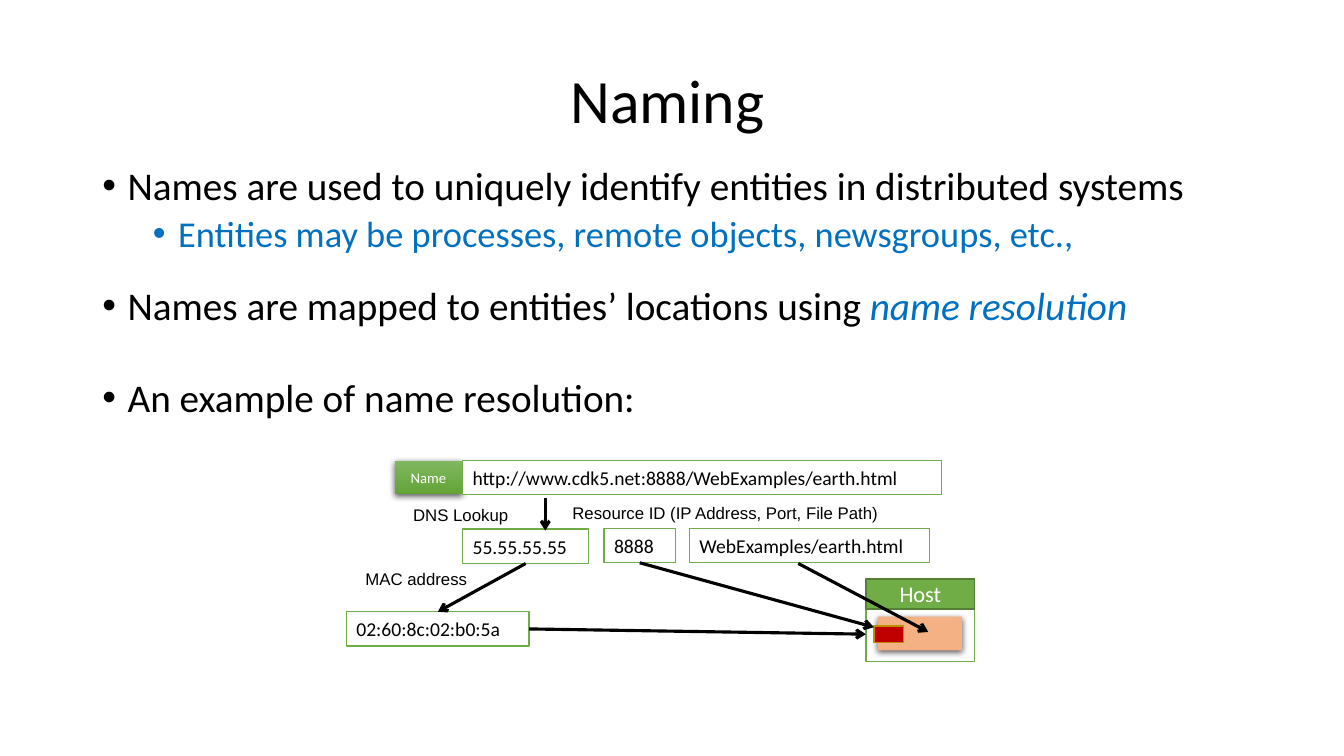
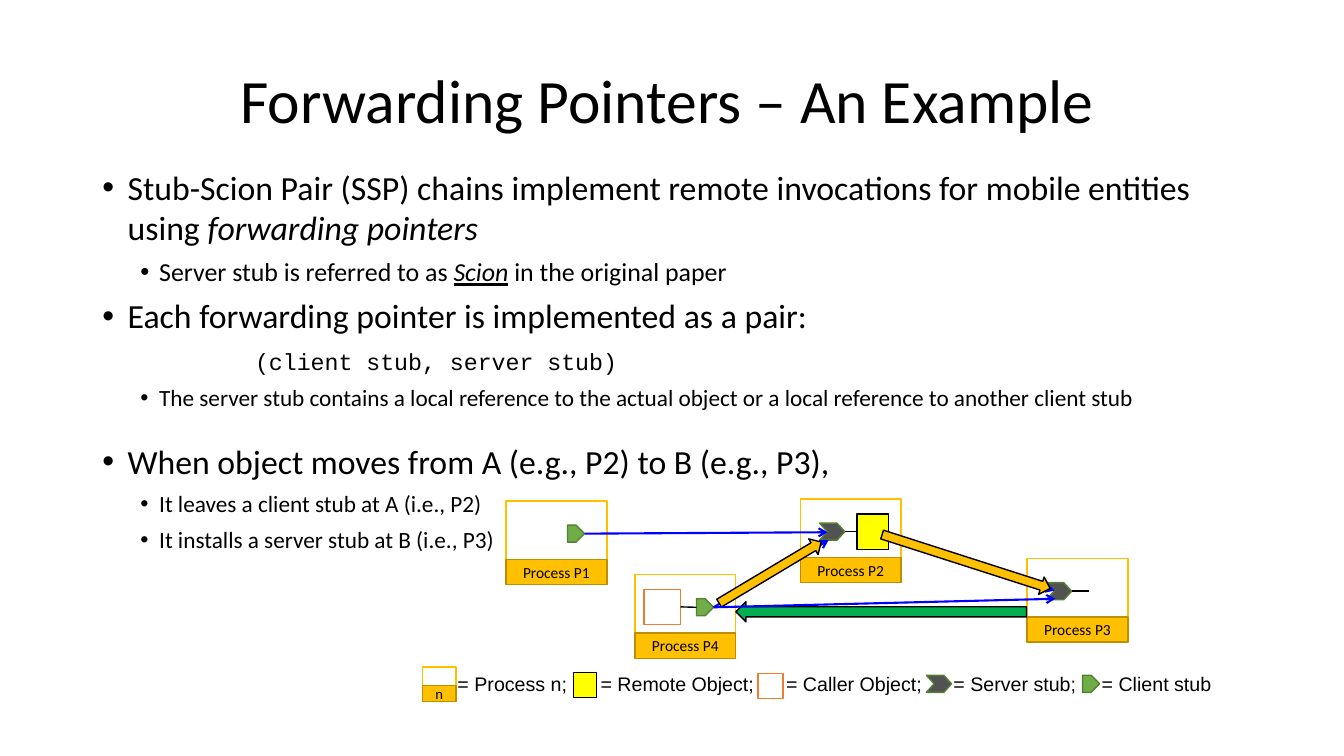
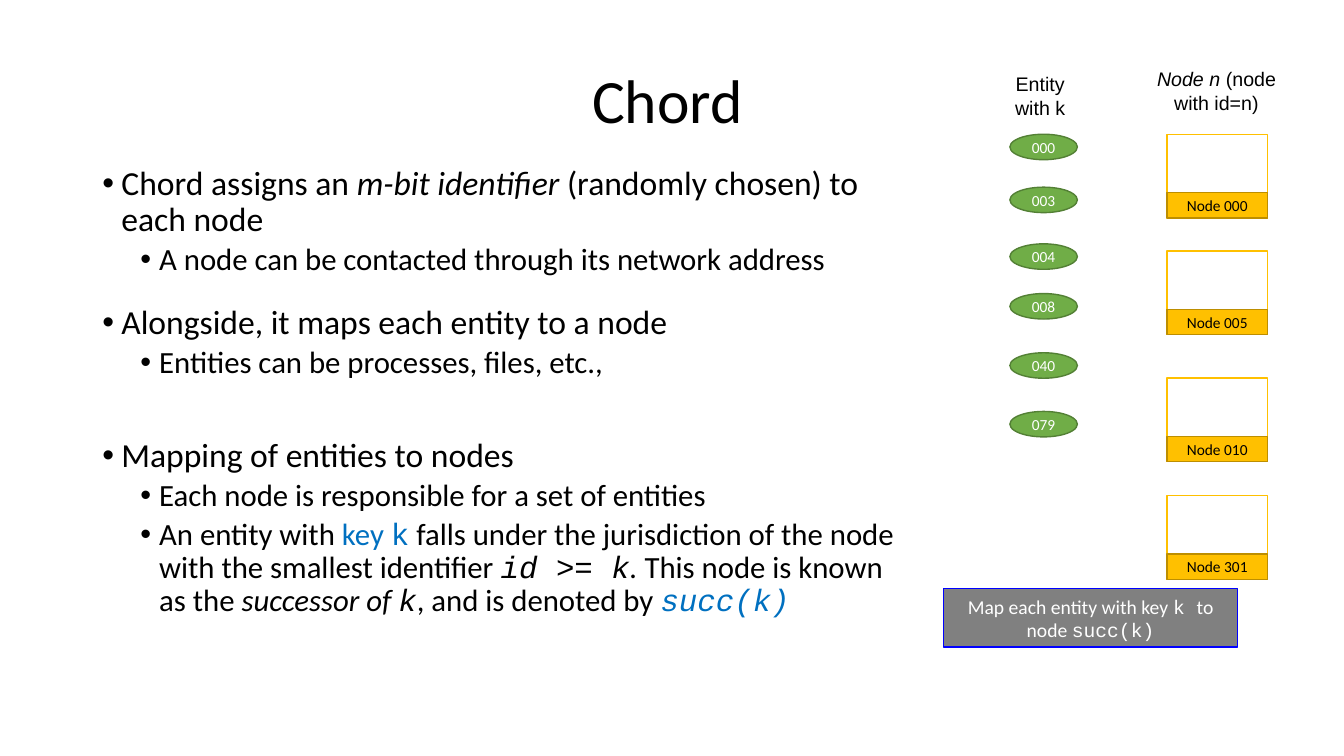
from dataclasses import dataclass

from lxml import etree
from pptx import Presentation
from pptx.dml.color import RGBColor
from pptx.enum.shapes import MSO_CONNECTOR, MSO_SHAPE
from pptx.enum.text import MSO_ANCHOR, MSO_AUTO_SIZE, PP_ALIGN
from pptx.oxml.ns import qn
from pptx.util import Pt

RECTANGLE = MSO_SHAPE.RECTANGLE
ELLIPSE = MSO_SHAPE.OVAL
PENTAGON = MSO_SHAPE.PENTAGON
CHEVRON = MSO_SHAPE.CHEVRON
RIGHT_ARROW = MSO_SHAPE.RIGHT_ARROW
STRAIGHT = MSO_CONNECTOR.STRAIGHT
MIDDLE = MSO_ANCHOR.MIDDLE
TOP = MSO_ANCHOR.TOP
NO_AUTOFIT = MSO_AUTO_SIZE.NONE
LEFT = PP_ALIGN.LEFT
CENTER = PP_ALIGN.CENTER

SANS, LABEL_FONT, MONO = "Calibri", "Arial", "Courier New"
BLACK, WHITE = "000000", "FFFFFF"
GREEN, DARK_GREEN = "70AD47", "538035"
GOLD, DARK_GOLD = "FFC000", "BD8E00"
TEXT_BLUE, LINE_BLUE = "0070C0", "0000FF"
YELLOW, ORANGE, SLATE = "FFFF00", "ED7D31", "525252"

TITLE_BOX = (138, 21.6, 677.5, 104.4)
BODY_LEFT, BODY_TOP = 66, 115.2
BAND_HEIGHT = 18
FRAME_SIZE = (72, 59.8)
CLIENT_SIZE = (12.2, 12.2)
SERVER_SIZE = (18, 12.2)
STUB_TOP = 17.3

ITALIC = {"italic": True}
BLUE = {"color": TEXT_BLUE}
CODE = {"font": MONO}
ITALIC_CODE = {**ITALIC, **CODE}


@dataclass
class Level:
    """Look of one kind of list paragraph."""
    depth: int
    margin: float
    hanging: float
    size: float
    before: float
    color: str = BLACK
    font: str = SANS
    bullet: bool = True


def rgb(color):
    return RGBColor.from_string(color)


def points(values):
    return [Pt(value) for value in values]


def write_runs(paragraph, content, size, color=BLACK, font=SANS):
    """Content is a string or a list of strings and (string, style) pairs."""
    for part in [content] if isinstance(content, str) else content:
        text, style = (part, {}) if isinstance(part, str) else part
        run = paragraph.add_run()
        run.text = text
        run.font.size = Pt(size)
        run.font.name = style.get("font", font)
        run.font.color.rgb = rgb(style.get("color", color))
        run.font.italic = style.get("italic", False)
        run.font.underline = style.get("underline", False)


def place(shape, box):
    shape.left, shape.top, shape.width, shape.height = points(box)


def add_slide(presentation, title):
    slide = presentation.slides.add_slide(presentation.slide_layouts[1])
    shape = slide.shapes.title
    place(shape, TITLE_BOX)
    text_frame = shape.text_frame
    text_frame.auto_size = NO_AUTOFIT
    text_frame.vertical_anchor = MIDDLE
    paragraph = text_frame.paragraphs[0]
    paragraph.alignment = CENTER
    paragraph.line_spacing = 0.9
    write_runs(paragraph, title, 44)
    return slide


def set_bullet(paragraph, level):
    properties = paragraph._p.get_or_add_pPr()
    properties.set("marL", str(Pt(level.margin)))
    properties.set("indent", str(Pt(-level.hanging)))
    if level.bullet:
        etree.SubElement(properties, qn("a:buFont"), typeface="Arial")
        etree.SubElement(properties, qn("a:buChar"), char="•")
    else:
        etree.SubElement(properties, qn("a:buNone"))


def fill_body(slide, width, height, items, line_spacing=0.9):
    """Each item is (level, content) or (level, content, wider space before)."""
    shape = slide.placeholders[1]
    place(shape, (BODY_LEFT, BODY_TOP, width, height))
    text_frame = shape.text_frame
    text_frame.auto_size = NO_AUTOFIT
    text_frame.vertical_anchor = TOP
    for index, (level, content, *wider) in enumerate(items):
        paragraph = text_frame.add_paragraph() if index else text_frame.paragraphs[0]
        paragraph.level = level.depth
        set_bullet(paragraph, level)
        paragraph.alignment = LEFT
        paragraph.line_spacing = line_spacing
        before = wider[0] if wider else level.before
        paragraph.space_before = Pt(before if index else 0)
        paragraph.space_after = Pt(0)
        write_runs(paragraph, content, level.size, level.color, level.font)


def add_box(slide, kind, box, fill, line=None, text="", size=11, color=BLACK,
            alignment=CENTER):
    shape = slide.shapes.add_shape(kind, *points(box))
    shape.shadow.inherit = False
    shape.fill.solid()
    shape.fill.fore_color.rgb = rgb(fill)
    if line:
        shape.line.color.rgb = rgb(line)
        shape.line.width = Pt(1)
    else:
        shape.line.fill.background()
    if text:
        text_frame = shape.text_frame
        text_frame.word_wrap = True
        text_frame.vertical_anchor = MIDDLE
        paragraph = text_frame.paragraphs[0]
        paragraph.alignment = alignment
        write_runs(paragraph, text, size, color)
    return shape


def add_label(slide, box, content, size, alignment=LEFT):
    text_frame = slide.shapes.add_textbox(*points(box)).text_frame
    text_frame.word_wrap = True
    paragraph = text_frame.paragraphs[0]
    paragraph.alignment = alignment
    write_runs(paragraph, content, size, font=LABEL_FONT)


def add_line(slide, start, end, color=BLACK, width=1, arrow=False):
    """Each end is a point (x, y) or a joint (shape, side)."""
    connector = slide.shapes.add_connector(STRAIGHT, 0, 0, 0, 0)
    if isinstance(start[0], (int, float)):
        connector.begin_x, connector.begin_y = points(start)
    else:
        connector.begin_connect(*start)
    if isinstance(end[0], (int, float)):
        connector.end_x, connector.end_y = points(end)
    else:
        connector.end_connect(*end)
    connector.line.color.rgb = rgb(color)
    connector.line.width = Pt(width)
    if arrow:
        etree.SubElement(connector.line._get_or_add_ln(), qn("a:tailEnd"), type="arrow")
    etree.SubElement(connector._element.spPr, qn("a:effectLst"))


def add_shadow(shape):
    effects = shape._element.spPr.find(qn("a:effectLst"))
    shadow = etree.SubElement(effects, qn("a:outerShdw"), blurRad=str(Pt(4.5)),
                              dist=str(Pt(1.5)), dir="5400000", rotWithShape="0")
    shade = etree.SubElement(shadow, qn("a:srgbClr"), val=BLACK)
    etree.SubElement(shade, qn("a:alpha"), val="63000")


def add_frame(slide, left, top, label, size=FRAME_SIZE, band=BAND_HEIGHT, text_size=11):
    """White frame with a gold name band along its bottom."""
    width, height = size
    add_box(slide, RECTANGLE, (left, top, width, height), WHITE, GOLD)
    add_box(slide, RECTANGLE, (left, top + height - band, width, band), GOLD, DARK_GOLD,
            label, text_size)


def add_client_stub(slide, left, top):
    return add_box(slide, PENTAGON, (left, top, *CLIENT_SIZE), GREEN, DARK_GREEN)


def add_server_stub(slide, left, top):
    shape = add_box(slide, CHEVRON, (left, top, *SERVER_SIZE), SLATE, DARK_GREEN)
    shape.adjustments[0] = 0.455
    return shape


def add_block_arrow(slide, box, rotation, fill):
    add_box(slide, RIGHT_ARROW, box, fill, BLACK).rotation = rotation


def add_value_box(slide, left, top, width, text):
    return add_box(slide, RECTANGLE, (left, top, width, 24.5), WHITE, GREEN, text, 14,
                   alignment=LEFT)


def build_naming(presentation):
    slide = add_slide(presentation, "Naming")
    main_level = Level(0, 18, 18, 28, 10)
    detail = Level(1, 54, 18, 26, 5, color=TEXT_BLUE)
    fill_body(slide, 816, 356.4, [
        (main_level, "Names are used to uniquely identify entities in distributed systems"),
        (detail, "Entities may be processes, remote objects, newsgroups, etc.,"),
        (main_level, ["Names are mapped to entities’ locations using ",
                      ("name resolution", {**ITALIC, **BLUE})], 22.6),
        (main_level, "An example of name resolution:", 35.2),
    ])

    name = add_box(slide, RECTANGLE, (282, 329, 48, 24), GREEN, None, "Name", 10.5, WHITE)
    name.fill.gradient()
    name.fill.gradient_angle = 270
    for stop, color in zip(name.fill.gradient_stops, ("81B861", "62A336")):
        stop.color.rgb = rgb(color)
    add_shadow(name)
    add_value_box(slide, 330.5, 329, 342, "http://www.cdk5.net:8888/WebExamples/earth.html")
    address = add_value_box(slide, 330.5, 378, 90, "55.55.55.55")
    add_value_box(slide, 492.5, 377.5, 171.5, "WebExamples/earth.html")
    port = add_value_box(slide, 431.5, 377.5, 51, "8888")
    mac = add_value_box(slide, 247.5, 437, 130.5, "02:60:8c:02:b0:5a")
    for left, top, width, text in (
        (288, 357, 84, "DNS Lookup"),
        (401.8, 355.8, 234.7, "Resource ID (IP Address, Port, File Path)"),
        (254, 403, 88.5, "MAC address"),
    ):
        add_label(slide, (left, top, width, 21.8), text, 12)

    add_box(slide, RECTANGLE, (618.5, 413.5, 77.8, 59), WHITE, GREEN)
    add_box(slide, RECTANGLE, (618.5, 413.5, 77.8, 21.6), GREEN, DARK_GREEN, "Host", 16, WHITE)
    add_shadow(add_box(slide, RECTANGLE, (627, 440.5, 60, 24), "F4B183"))
    add_box(slide, RECTANGLE, (624.2, 447.1, 21, 12), "C00000", DARK_GOLD)
    for start, end in (
        ((389.5, 356), (389.5, 379)),
        ((address, 2), (mac, 0)),
        ((mac, 3), (618.5, 453)),
        ((port, 2), (624.2, 448)),
        ((570.2, 402.5), (663, 451.4)),
    ):
        add_line(slide, start, end, width=2.25, arrow=True)


def add_legend(slide):
    top = 476.6
    add_frame(slide, 301.7, top, "n", (24, 24.5), 11.5, 10.5)
    add_box(slide, RECTANGLE, (409.7, 480.2, 16.6, 18), YELLOW, BLACK)
    add_box(slide, RECTANGLE, (541.4, 481, 18, 18), WHITE, ORANGE)
    add_server_stub(slide, 661.7, 482.4)
    add_client_stub(slide, 773.3, 482.4)
    for left, width, text in (
        (319.7, 102.2, "= Process n;"),
        (421.9, 138.2, "= Remote Object;"),
        (554.4, 113.8, "= Caller Object;"),
        (673.9, 102.2, "= Server stub;"),
        (779.8, 102.2, "= Client stub"),
    ):
        add_label(slide, (left, top, width, 24.5), text, 14)


def build_forwarding_pointers(presentation):
    slide = add_slide(presentation, "Forwarding Pointers – An Example")
    main_level = Level(0, 18, 18, 24.1, 6)
    note = Level(1, 40.5, 13.5, 18.5, 6)
    detail = Level(1, 40.5, 13.5, 16.6, 6)
    code = Level(0, 109, 0, 16.6, 8, font=MONO, bullet=False)
    fill_body(slide, 803.5, 302.4, [
        (main_level, ["Stub-Scion Pair (SSP) chains implement remote invocations "
                      "for mobile entities using ", ("forwarding pointers", ITALIC)]),
        (note, ["Server stub is referred to as ", ("Scion", {**ITALIC, "underline": True}),
                " in the original paper"]),
        (main_level, "Each forwarding pointer is implemented as a pair:"),
        (code, "(client stub, server stub)"),
        (detail, "The server stub contains a local reference to the actual object "
                 "or a local reference to another client stub"),
        (main_level, "When object moves from A (e.g., P2) to B (e.g., P3),", 21),
        (detail, "It leaves a client stub at A (i.e., P2)"),
        (detail, "It installs a server stub at B (i.e., P3)"),
    ], line_spacing=1.0)

    frames = {"P1": (361.5, 357.8), "P2": (571.7, 356.4),
              "P3": (733.7, 398.9), "P4": (453.6, 410.4)}
    for process, (left, top) in frames.items():
        add_frame(slide, left, top, f"Process {process}")
    clients = {process: add_client_stub(slide, frames[process][0] + 43.9,
                                        frames[process][1] + STUB_TOP)
               for process in ("P1", "P4")}
    for process in ("P2", "P3"):
        left, top = frames[process]
        stub = add_server_stub(slide, left + 13.7, top + STUB_TOP)
        stub_right, stub_middle = left + 31.7, top + STUB_TOP + SERVER_SIZE[1] / 2
        add_line(slide, (stub, 3), (stub_right + 12.2, stub_middle))

    for start, end in (
        ((clients["P1"], 3), (591.1, 380.2)),
        ((627.1, 380.2), (753.1, 421.9)),
        ((clients["P4"], 3), (591.8, 385.9)),
    ):
        add_line(slide, start, end, LINE_BLUE, 1.5, arrow=True)
    add_box(slide, RECTANGLE, (612.2, 367.2, 22.3, 25.2), YELLOW, BLACK)
    caller = add_box(slide, RECTANGLE, (460.1, 420.9, 26, 25.2), WHITE, ORANGE)
    add_line(slide, (caller, 3), (clients["P4"], 1))
    add_block_arrow(slide, (507.6, 402.5, 85, 13), 329.1, GOLD)
    add_block_arrow(slide, (627.1, 394.6, 126, 13), 17.8, GOLD)
    add_block_arrow(slide, (525.6, 429.8, 207.6, 14.4), 180, "00B050")
    add_line(slide, (clients["P4"], 3), (753.8, 427.7), LINE_BLUE, 1.5, arrow=True)
    add_legend(slide)


def build_chord(presentation):
    slide = add_slide(presentation, "Chord")
    main_level = Level(0, 13.5, 13.5, 24, 7.5)
    detail = Level(1, 40.5, 13.5, 22, 3.8)
    fill_body(slide, 589.7, 356.4, [
        (main_level, ["Chord assigns an ", ("m-bit identifier ", ITALIC),
                      "(randomly chosen) to each node"]),
        (detail, "A node can be contacted through its network address"),
        (main_level, "Alongside, it maps each entity to a node", 20.1),
        (detail, "Entities can be processes, files, etc.,"),
        (main_level, "Mapping of entities to nodes", 41.5),
        (detail, "Each node is responsible for a set of entities"),
        (detail, ["An entity with ", ("key ", BLUE), ("k", {**BLUE, **CODE}),
                  " falls under the jurisdiction of the node with the smallest identifier ",
                  ("id >= k", ITALIC_CODE), (".", ITALIC), " This node is known as the ",
                  ("successor of ", ITALIC), ("k", ITALIC_CODE), ", and is denoted by ",
                  ("succ(k)", {**ITALIC_CODE, **BLUE})]),
    ])

    for node, top in (("000", 95.9), ("005", 179.3), ("010", 270), ("301", 354)):
        add_frame(slide, 833.5, top, f"Node {node}")
    for key, top in (("000", 95.9), ("003", 133.7), ("004", 174.2),
                     ("008", 209.7), ("040", 252), ("079", 293.9)):
        add_box(slide, ELLIPSE, (721.4, top, 48.2, 18.2), GREEN, DARK_GREEN, key, 11, WHITE)
    add_label(slide, (709.9, 48.2, 66.2, 41), "Entity with k", 14, CENTER)
    add_label(slide, (815, 44.6, 108, 41), [("Node n", ITALIC), " (node with id=n)"], 14, CENTER)
    add_box(slide, RECTANGLE, (673.9, 420.5, 210.2, 41.8), "808080", LINE_BLUE,
            ["Map each entity with key ", ("k ", CODE), "to node ", ("succ(k)", CODE)],
            14, WHITE)


def main():
    presentation = Presentation()
    presentation.slide_width, presentation.slide_height = Pt(960), Pt(540)
    build_naming(presentation)
    build_forwarding_pointers(presentation)
    build_chord(presentation)
    presentation.save("out.pptx")


if __name__ == "__main__":
    main()
